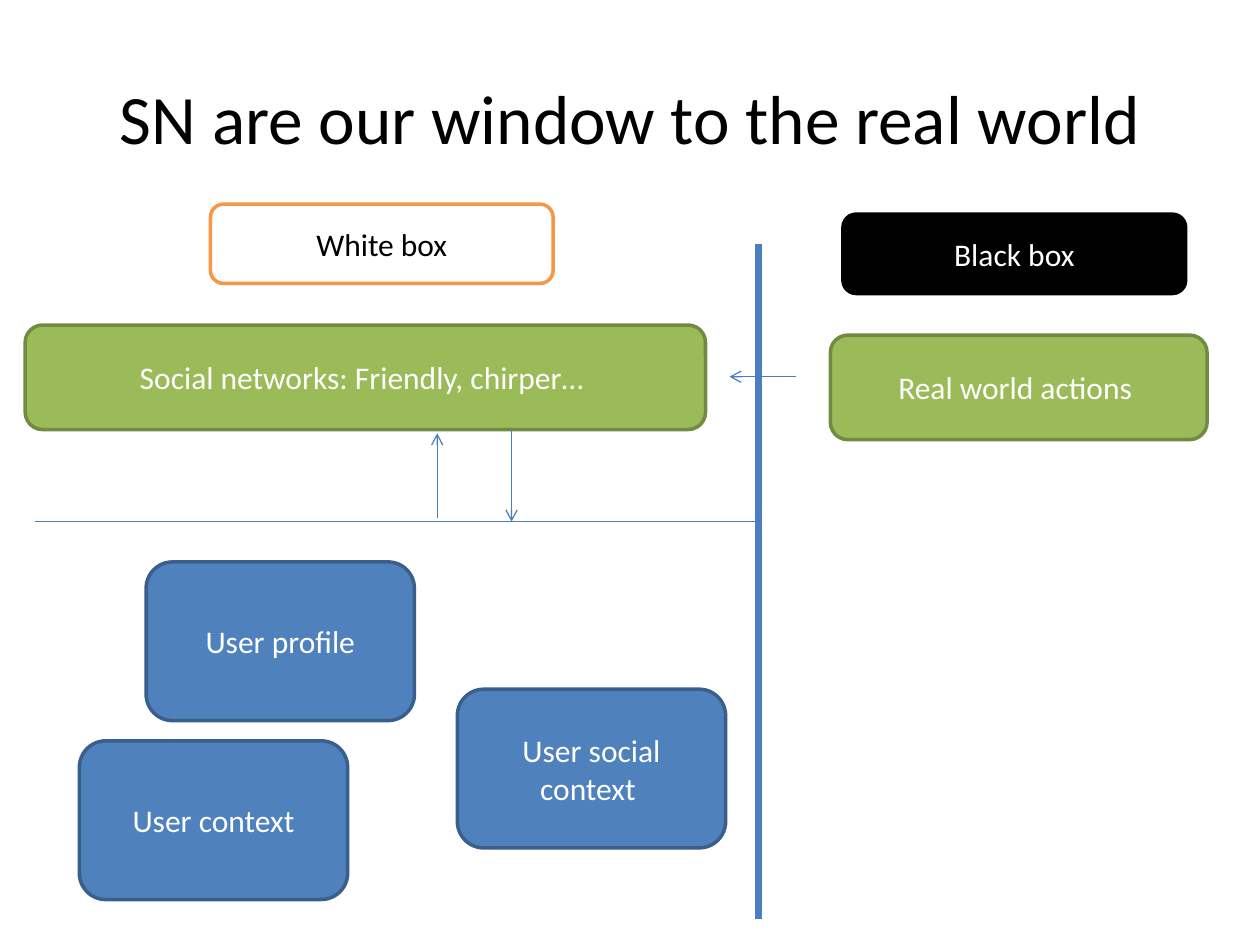
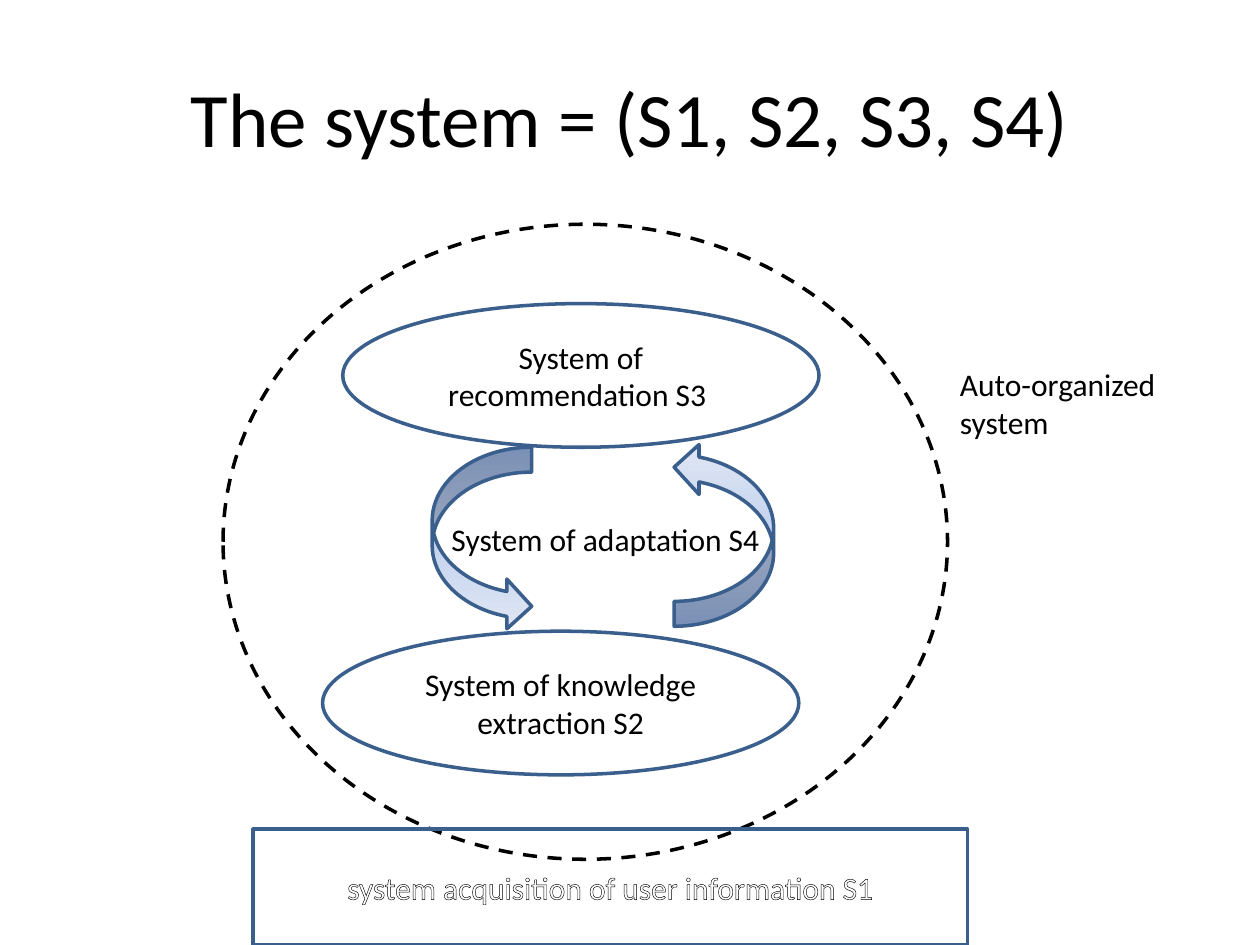
"""Builds two slides on social networks and the four-part system."""
from copy import deepcopy
from lxml import etree
from pptx import Presentation
from pptx import util as u
from pptx.dml.color import RGBColor
from pptx.enum import dml, shapes, text
from pptx.oxml.ns import qn

BLACK = RGBColor(0x00, 0x00, 0x00)
WHITE = RGBColor(0xFF, 0xFF, 0xFF)
GREEN = RGBColor(0x9B, 0xBB, 0x59)
MOSS = RGBColor(0x73, 0x8A, 0x42)
BLUE = RGBColor(0x4F, 0x81, 0xBD)
NAVY = RGBColor(0x3A, 0x5F, 0x8C)
STEEL = RGBColor(0x4B, 0x7E, 0xBC)
ORANGE = RGBColor(0xF7, 0x96, 0x46)
SHADES = [RGBColor(0x9A, 0xB5, 0xE4), RGBColor(0xC2, 0xD1, 0xED), RGBColor(0xE1, 0xE8, 0xF5)]
FONT = "Calibri"
ROUND = shapes.MSO_SHAPE.ROUNDED_RECTANGLE
OVAL = shapes.MSO_SHAPE.OVAL
RECT = shapes.MSO_SHAPE.RECTANGLE
CURVE = shapes.MSO_SHAPE.CURVED_RIGHT_ARROW

deck = Presentation()
deck.slide_width, deck.slide_height = u.Inches(10), u.Inches(7.5)
UNIT = deck.slide_width // 100


def box(slide, kind, spot, label, fill, edge, ink):
    """Add a shape, or a text box if kind is None, at a spot in grid units."""
    place = [round(n * UNIT) for n in spot]
    if kind is None:
        item = slide.shapes.add_textbox(*place)
    else:
        item = slide.shapes.add_shape(kind, *place)
        item.shadow.inherit = False
        item.line.color.rgb = edge
        item.line.width = u.Pt(2)
        if fill is None:
            item.fill.background()
        else:
            item.fill.solid()
            item.fill.fore_color.rgb = fill
    if label:
        frame = item.text_frame
        frame.text = label
        frame.word_wrap = True
        if kind is not None:
            frame.vertical_anchor = text.MSO_ANCHOR.MIDDLE
            frame.paragraphs[0].alignment = text.PP_ALIGN.CENTER
        font = frame.paragraphs[0].runs[0].font
        font.name, font.size, font.color.rgb = FONT, u.Pt(18), ink
    return item


def link(slide, ends, width, arrow):
    """Add a straight line between two points in grid units."""
    line = slide.shapes.add_connector(
        shapes.MSO_CONNECTOR.STRAIGHT, *[round(n * UNIT) for n in ends])
    line.line.color.rgb = STEEL
    line.line.width = u.Pt(width)
    if arrow:
        etree.SubElement(line.line._get_or_add_ln(), qn("a:tailEnd"), type="arrow")
    etree.SubElement(line._element.spPr, qn("a:effectLst"))


pages = []
for name, size in [("SN are our window to the real world", 39.6),
                   ("The system = (S1, S2, S3, S4)", 44)]:
    page = deck.slides.add_slide(deck.slide_layouts[5])
    title = page.shapes.title
    title.left, title.top, title.width, title.height = [
        round(n * UNIT) for n in (5, 3, 90, 12.5)]
    title.text_frame.text = name
    title.text_frame.vertical_anchor = text.MSO_ANCHOR.MIDDLE
    title.text_frame.paragraphs[0].alignment = text.PP_ALIGN.CENTER
    font = title.text_frame.paragraphs[0].runs[0].font
    font.name, font.size, font.color.rgb = FONT, u.Pt(size), BLACK
    pages.append(page)
world, system = pages

for spot, label in [((2, 25.8, 54, 8.3), "Social networks: Friendly, chirper… "),
                    ((65.9, 26.6, 29.9, 8.3), "Real world actions ")]:
    box(world, ROUND, spot, label, GREEN, MOSS, WHITE)

WALL, FLOOR = 60.2, 41.4
for ends, width, arrow in [((40.6, 34, 40.6, FLOOR), 0.75, True),
                           ((34.7, 41.1, 34.7, 34.4), 0.75, True),
                           ((WALL, 19.4, WALL, 72.9), 4, False),
                           ((63.2, 29.9, 57.9, 29.9), 0.75, True),
                           ((2.8, FLOOR, WALL, FLOOR), 0.75, False)]:
    link(world, ends, width, arrow)

for left, top, label, fill, edge, ink in [
        (66.9, 17, "Black box", BLACK, BLACK, WHITE),
        (16.7, 16.2, "White box", WHITE, ORANGE, BLACK)]:
    box(world, ROUND, (left, top, 27.2, 6.3), label, fill, edge, ink)

for left, top, label in [(11.6, 44.6, "User profile"),
                         (6.3, 58.8, "User context"),
                         (36.3, 54.7, "User social context ")]:
    box(world, ROUND, (left, top, 21.3, 12.6), label, BLUE, NAVY, WHITE)

ring = box(system, OVAL, (17.7, 17.8, 57.5, 50.4), "", None, BLACK, BLACK)
ring.line.dash_style = dml.MSO_LINE.DASH
box(system, None, (75.2, 28.5, 20.1, 7.1), "Auto-organized system", None, None, BLACK)

for left, top, label in [(27.2, 24.1, "System of recommendation S3 "),
                         (25.6, 50.1, "System of knowledge extraction S2")]:
    box(system, OVAL, (left, top, 37.8, 11.4), label, None, NAVY, BLACK)

base = box(system, RECT, (20.1, 65.8, 56.7, 9.2),
           "system acquisition of user information S1", None, NAVY, WHITE)
props = base.text_frame.paragraphs[0].runs[0]._r.get_or_add_rPr()
rim = etree.Element(qn("a:ln"), w=str(u.Pt(0.75)))
paint = etree.SubElement(rim, qn("a:solidFill"))
etree.SubElement(paint, qn("a:srgbClr"), val=str(BLACK))
props.insert(0, rim)

for left, top, turn in [(34.3, 35.5, 0), (53.5, 35.1, 180)]:
    curve = box(system, CURVE, (left, top, 7.9, 14.6), "", None, NAVY, BLACK)
    curve.rotation = turn
    curve.fill.gradient()
    curve.fill.gradient_angle = 270
    stops = curve._element.spPr.find(".//" + qn("a:gsLst"))
    stops.append(deepcopy(stops[-1]))
    for step, (stop, shade) in enumerate(zip(curve.fill.gradient_stops, SHADES)):
        stop.position = step / 2
        stop.color.rgb = shade

note = box(system, None, (34.4, 40.8, 27.3, 4), "System of adaptation S4", None, None, BLACK)
note.text_frame.word_wrap = False
note.text_frame.paragraphs[0].alignment = text.PP_ALIGN.CENTER

deck.save("out.pptx")
